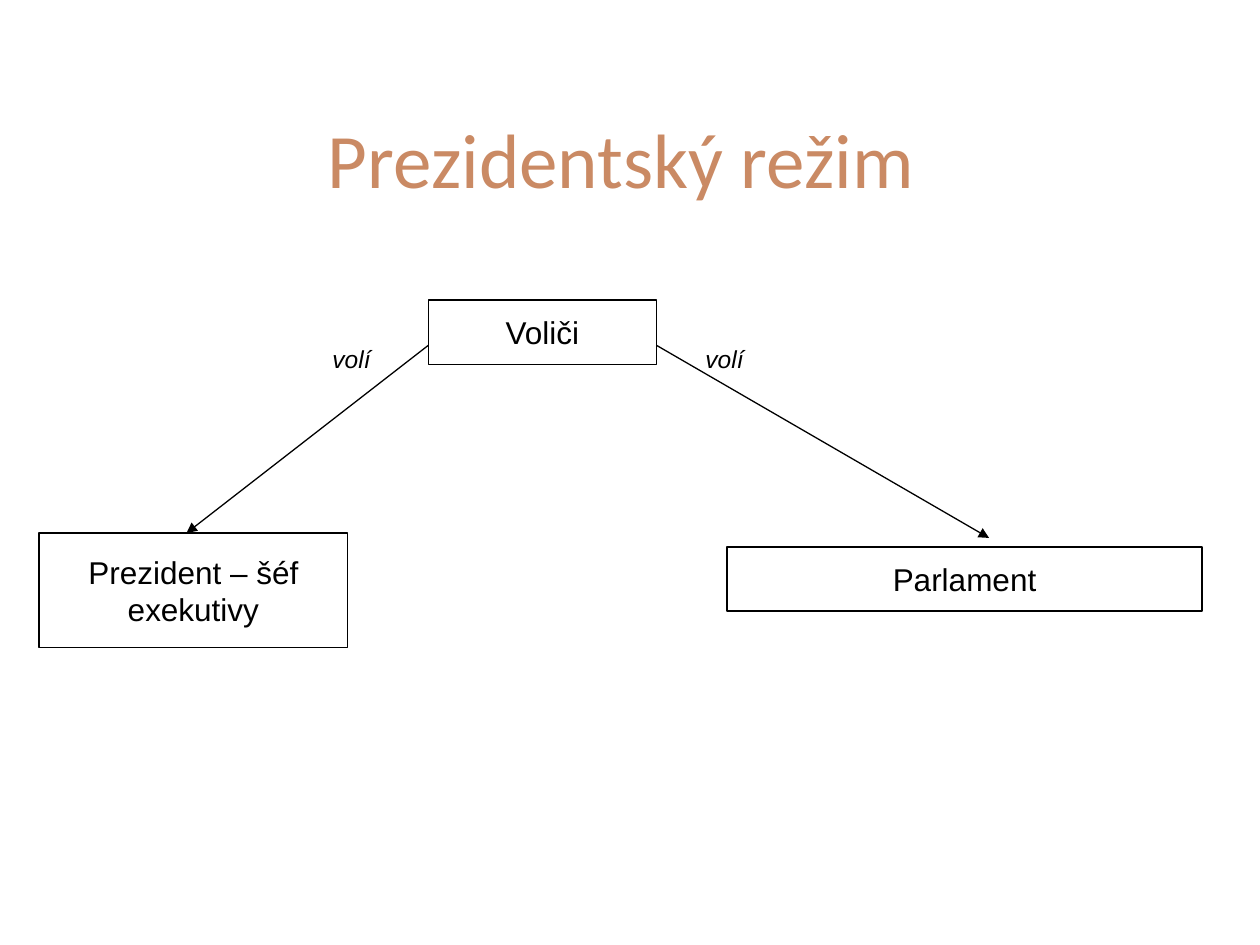
from pptx import Presentation
from pptx import util as u
from pptx.dml.color import RGBColor
from pptx.enum import shapes, text
from pptx.oxml.ns import qn
from lxml import etree

BLACK = "000000"


def color(value):
    """Turn a hex string into a colour."""
    return RGBColor.from_string(value)


def write(shape, words, size, font="Arial", ink=BLACK, italic=False,
          align=text.PP_ALIGN.CENTER, anchor=text.MSO_ANCHOR.MIDDLE):
    """Set one styled paragraph in a shape."""
    frame = shape.text_frame
    frame.word_wrap = True
    frame.vertical_anchor = anchor
    para = frame.paragraphs[0]
    para.text = words
    para.alignment = align
    para.font.name = font
    para.font.size = u.Pt(size)
    para.font.italic = italic
    para.font.color.rgb = color(ink)


def add_title(page, box, words):
    """Place the slide title in its box."""
    title = page.shapes.add_textbox(*map(u.Pt, box))
    write(title, words, 44, font="Calibri", ink="CA8A64")


def add_node(page, box, words):
    """Draw an outlined institution box."""
    node = page.shapes.add_shape(shapes.MSO_SHAPE.RECTANGLE, *map(u.Pt, box))
    node.shadow.inherit = False
    node.fill.background()
    node.line.color.rgb = color(BLACK)
    node.line.width = u.Pt(0.75)
    write(node, words, 18)


def add_arrow(page, start, end):
    """Draw a straight arrow from start to end."""
    arrow = page.shapes.add_connector(
        shapes.MSO_CONNECTOR.STRAIGHT, *map(u.Pt, start + end))
    arrow.line.color.rgb = color(BLACK)
    arrow.line.width = u.Pt(0.75)
    etree.SubElement(arrow.line._get_or_add_ln(), qn("a:tailEnd"), type="triangle")
    etree.SubElement(arrow._element.spPr, qn("a:effectLst"))


def add_label(page, box, words):
    """Place an italic arrow label."""
    label = page.shapes.add_textbox(*map(u.Pt, box))
    write(label, words, 14, italic=True, align=text.PP_ALIGN.LEFT,
          anchor=text.MSO_ANCHOR.BOTTOM)


def add_election_diagram(page, box):
    """Show voters electing the president and the parliament."""
    left, top, width, height = box
    voters_left, voters_width, node_height = left + 222.5, 130.3, 36.7
    president_width, president_height = 176.4, 65.5
    parliament_width = 271.4
    president_top = top + height - president_height
    parliament_left = left + width - parliament_width
    arrow_top = top + 25.9

    add_node(page, (voters_left, top, voters_width, node_height), "Voliči")
    add_node(page, (parliament_left, top + 141.1, parliament_width, node_height),
             "Parlament")
    add_node(page, (left, president_top, president_width, president_height),
             "Prezident – šéf exekutivy")
    add_arrow(page, (voters_left, arrow_top), (left + 84.3, president_top))
    add_arrow(page, (voters_left + voters_width, arrow_top),
              (left + 542.9, top + 136))
    for offset in (160.6, 373.7):
        add_label(page, (left + offset, top + 21.6, 79.9, 23.8), "volí")


def main():
    """Build and save the deck."""
    deck = Presentation()
    deck.slide_width, deck.slide_height = u.Pt(720), u.Pt(540)
    page = deck.slides.add_slide(deck.slide_layouts[6])
    add_title(page, (22.3, 74.2, 665.3, 31.7), "Prezidentský režim")
    add_election_diagram(page, (22.3, 171.4, 664.6, 198.7))
    deck.save("out.pptx")


if __name__ == "__main__":
    main()
